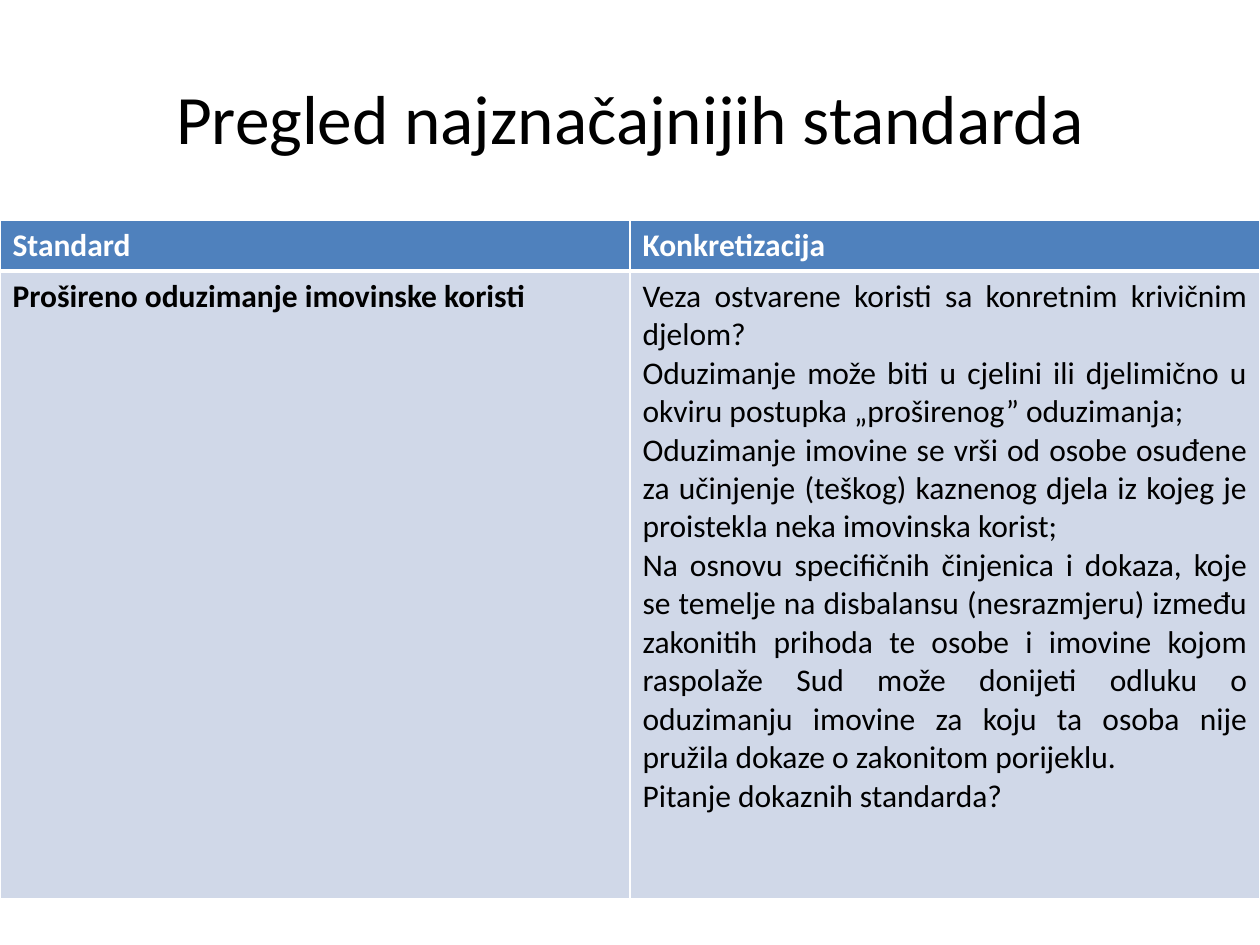
from lxml.etree import SubElement
from pptx import Presentation
from pptx.dml.color import RGBColor
from pptx.enum.text import MSO_ANCHOR, PP_ALIGN
from pptx.oxml.ns import qn
from pptx.util import Inches, Pt

COLORS = {"header": "4F81BD", "body": "D0D8E8", "border": "FFFFFF",
          "light": "FFFFFF", "dark": "000000"}
TITLE = "Pregled najznačajnijih standarda"
HEADERS = ["Standard", "Konkretizacija"]
STANDARD = "Prošireno oduzimanje imovinske koristi"
DETAILS = [
    "Veza ostvarene koristi sa konretnim krivičnim djelom?",
    "Oduzimanje može biti u cjelini ili djelimično u okviru postupka „proširenog” oduzimanja;",
    "Oduzimanje imovine se vrši od osobe osuđene za učinjenje (teškog) kaznenog djela "
    "iz kojeg je proistekla neka imovinska korist;",
    "Na osnovu specifičnih činjenica i dokaza, koje se temelje na disbalansu (nesrazmjeru) "
    "između zakonitih prihoda te osobe i imovine kojom raspolaže Sud može donijeti odluku "
    "o oduzimanju imovine za koju ta osoba nije pružila dokaze o zakonitom porijeklu.",
    "Pitanje dokaznih standarda?",
]
HEADER_FORMAT = {"size": Pt(18), "bold": True, "color": "light"}
STANDARD_FORMAT = {"size": Pt(18), "bold": True, "color": "dark"}
DETAIL_FORMAT = {"size": Pt(18), "bold": False, "color": "dark"}
TITLE_FORMAT = {"size": Pt(39.6), "bold": False, "color": "dark"}
ROWS = [
    {"height": 0.4, "fill": "header", "bottom": 3, "top": 1, "cells": [
        ([header], HEADER_FORMAT, PP_ALIGN.LEFT) for header in HEADERS]},
    {"height": 4.98, "fill": "body", "bottom": 1, "top": 3, "cells": [
        ([STANDARD], STANDARD_FORMAT, PP_ALIGN.LEFT),
        (DETAILS, DETAIL_FORMAT, PP_ALIGN.JUSTIFY)]},
]
SLIDE_WIDTH, SLIDE_HEIGHT = 10, 7.5
TABLE_TOP = 1.75


def color(name):
    return RGBColor.from_string(COLORS[name])


def write(text_frame, lines, text_format, alignment):
    for index, line in enumerate(lines):
        paragraph = text_frame.add_paragraph() if index else text_frame.paragraphs[0]
        paragraph.alignment = alignment
        run = paragraph.add_run()
        run.text = line
        run.font.name = "Calibri"
        run.font.color.rgb = color(text_format["color"])
        for attribute in ("size", "bold"):
            setattr(run.font, attribute, text_format[attribute])


def set_borders(cell, top, bottom):
    properties = cell._tc.get_or_add_tcPr()
    widths = {"lnL": 1, "lnR": 1, "lnT": top, "lnB": bottom}
    for position, (side, width) in enumerate(widths.items()):
        line = SubElement(properties, qn(f"a:{side}"), w=str(Pt(width)))
        fill = SubElement(line, qn("a:solidFill"))
        SubElement(fill, qn("a:srgbClr"), val=COLORS["border"])
        properties.insert(position, line)


def add_title(slide):
    shape = slide.shapes.add_textbox(Inches(0.5), Inches(0.3), Inches(9), Inches(1.25))
    shape.text_frame.word_wrap = True
    shape.text_frame.vertical_anchor = MSO_ANCHOR.MIDDLE
    write(shape.text_frame, [TITLE], TITLE_FORMAT, PP_ALIGN.CENTER)


def add_standards_table(slide):
    height = sum(row["height"] for row in ROWS)
    table = slide.shapes.add_table(
        len(ROWS), len(HEADERS), Inches(0), Inches(TABLE_TOP),
        Inches(SLIDE_WIDTH), Inches(height)).table
    for column in table.columns:
        column.width = Inches(SLIDE_WIDTH / len(HEADERS))
    for row_index, row in enumerate(ROWS):
        table.rows[row_index].height = Inches(row["height"])
        for column_index, content in enumerate(row["cells"]):
            cell = table.cell(row_index, column_index)
            cell.fill.solid()
            cell.fill.fore_color.rgb = color(row["fill"])
            set_borders(cell, row["top"], row["bottom"])
            write(cell.text_frame, *content)


def main():
    presentation = Presentation()
    presentation.slide_width = Inches(SLIDE_WIDTH)
    presentation.slide_height = Inches(SLIDE_HEIGHT)
    slide = presentation.slides.add_slide(presentation.slide_layouts[6])
    add_title(slide)
    add_standards_table(slide)
    presentation.save("out.pptx")


if __name__ == "__main__":
    main()
